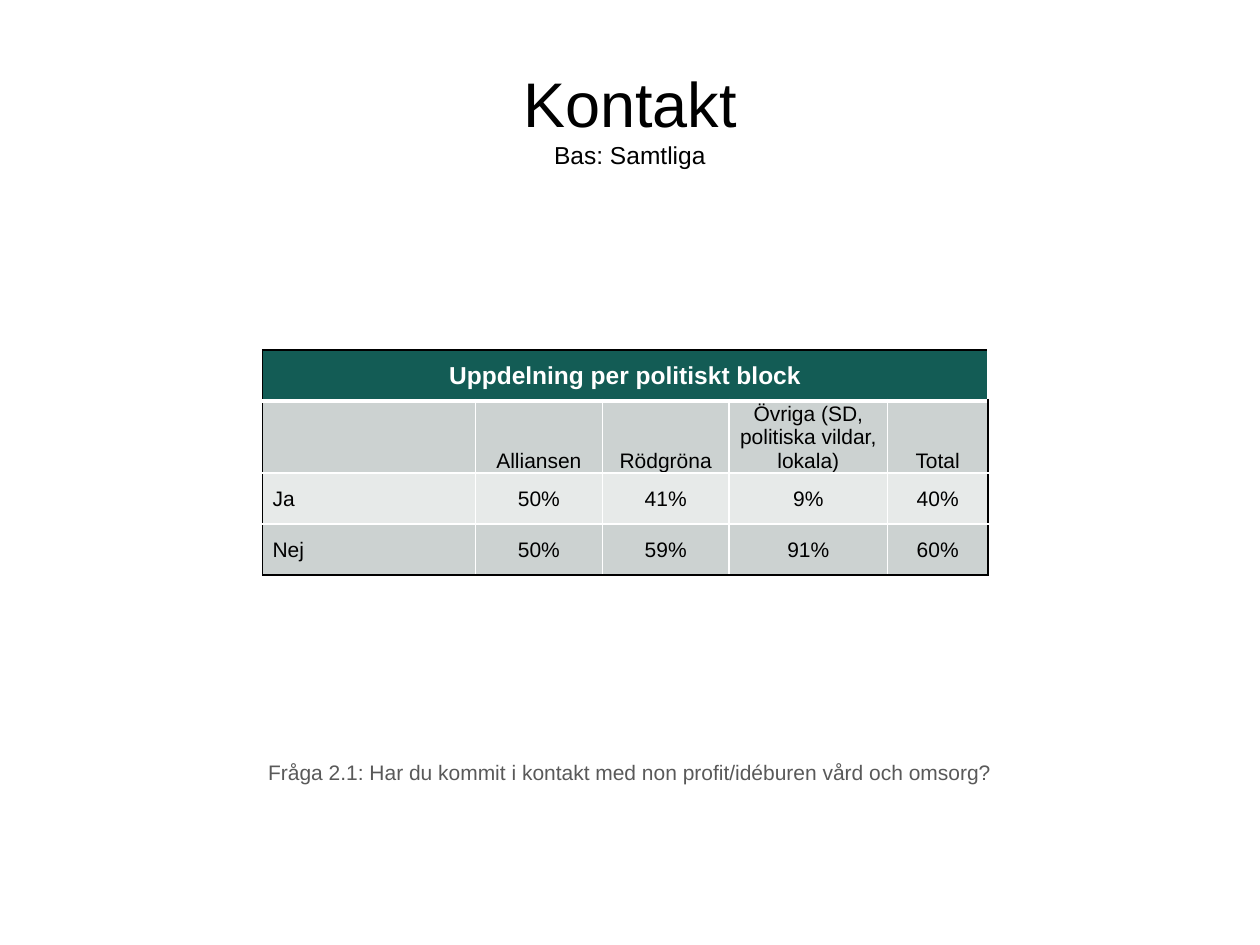
"""Build the contact slide: a title, a table by political block and the survey question."""
from lxml import etree
from pptx import Presentation, util as u
from pptx.dml.color import RGBColor
from pptx.enum import text as t
from pptx.oxml.ns import qn

COLORS = {"ink": "000000", "white": "FFFFFF", "teal": "135C55",
          "dark": "CCD2D1", "light": "E7EAE9", "note": "595959"}
TITLE = [("Kontakt", 36), ("Bas: Samtliga", 14)]
QUESTION = [("Fråga 2.1: Har du kommit i kontakt med non profit/idéburen vård och omsorg?", 12)]
HEADING = "Uppdelning per politiskt block"
ROWS = [
    [HEADING, "", "", "", ""],
    ["", "Alliansen", "Rödgröna", "Övriga (SD, politiska vildar, lokala)", "Total"],
    ["Ja", "50%", "41%", "9%", "40%"],
    ["Nej", "50%", "59%", "91%", "60%"],
]
ROW_FILLS = ["teal", "dark", "light", "dark"]
COLUMN_WIDTHS = [121.7, 72.5, 72.5, 90.5, 57.4]
ROW_HEIGHTS = [29.2, 40.5, 29.2, 29.2]
TABLE_LEFT, TABLE_TOP = 150, 200
MIDDLE, BOTTOM = t.MSO_ANCHOR.MIDDLE, t.MSO_ANCHOR.BOTTOM
LEFT, CENTER = t.PP_ALIGN.LEFT, t.PP_ALIGN.CENTER


def apply(target, values):
    for name, value in values.items():
        setattr(target, name, value)


def add_words(paragraph, words, size, color, bold=False):
    run = paragraph.add_run()
    run.text = words
    apply(run.font, {"name": "Arial", "size": u.Pt(size), "bold": bold})
    run.font.color.rgb = RGBColor.from_string(COLORS[color])


def add_caption(slide, lines, top, height, color, anchor):
    caption = slide.shapes.add_textbox(u.Pt(0), u.Pt(top), u.Pt(720), u.Pt(height))
    apply(caption.text_frame, {"word_wrap": True, "vertical_anchor": anchor})
    paragraph = caption.text_frame.paragraphs[0]
    paragraph.alignment = CENTER
    for index, (words, size) in enumerate(lines):
        if index:
            paragraph.add_line_break()
        add_words(paragraph, words, size, color)


def add_borders(cell, row, column):
    last_row, last_column = len(ROWS) - 1, len(COLUMN_WIDTHS) - 1
    edges = [
        ("a:lnL", column == 0, 1),
        ("a:lnR", column == last_column, 1),
        ("a:lnT", row == 0, 3 if row == 1 else 1),
        ("a:lnB", row == last_row, 3 if row == 0 else 1),
    ]
    properties = cell._tc.get_or_add_tcPr()
    for index, (tag, outer, width) in enumerate(edges):
        line = etree.Element(qn(tag), w=str(u.Pt(width)))
        fill = etree.SubElement(line, qn("a:solidFill"))
        etree.SubElement(fill, qn("a:srgbClr"), val=COLORS["ink" if outer else "white"])
        properties.insert(index, line)


def fill_cell(cell, words, row, column):
    heading = row == 0
    cell.fill.solid()
    cell.fill.fore_color.rgb = RGBColor.from_string(COLORS[ROW_FILLS[row]])
    add_borders(cell, row, column)
    cell.vertical_anchor = BOTTOM if row == 1 else MIDDLE
    if not heading:
        apply(cell, {"margin_left": u.Pt(0.7 if column else 5.8), "margin_right": u.Pt(0.7),
                     "margin_top": u.Pt(0.7), "margin_bottom": u.Pt(0)})
    paragraph = cell.text_frame.paragraphs[0]
    paragraph.alignment = CENTER if heading or column else LEFT
    if words:
        add_words(paragraph, words, 14 if heading else 12, "white" if heading else "ink", heading)


def add_block_table(slide):
    table = slide.shapes.add_table(
        len(ROWS), len(COLUMN_WIDTHS), u.Pt(TABLE_LEFT), u.Pt(TABLE_TOP),
        u.Pt(sum(COLUMN_WIDTHS)), u.Pt(sum(ROW_HEIGHTS))).table
    for column, width in zip(table.columns, COLUMN_WIDTHS):
        column.width = u.Pt(width)
    for row, height in zip(table.rows, ROW_HEIGHTS):
        row.height = u.Pt(height)
    for row, values in enumerate(ROWS):
        for column, words in enumerate(values):
            fill_cell(table.cell(row, column), words, row, column)
    table.cell(0, 0).merge(table.cell(0, len(COLUMN_WIDTHS) - 1))


def main():
    deck = Presentation()
    apply(deck, {"slide_width": u.Pt(720), "slide_height": u.Pt(540)})
    slide = deck.slides.add_slide(deck.slide_layouts[6])
    add_block_table(slide)
    add_caption(slide, TITLE, 21.6, 90, "ink", MIDDLE)
    add_caption(slide, QUESTION, 430.6, 21.8, "note", t.MSO_ANCHOR.TOP)
    deck.save("out.pptx")


if __name__ == "__main__":
    main()
